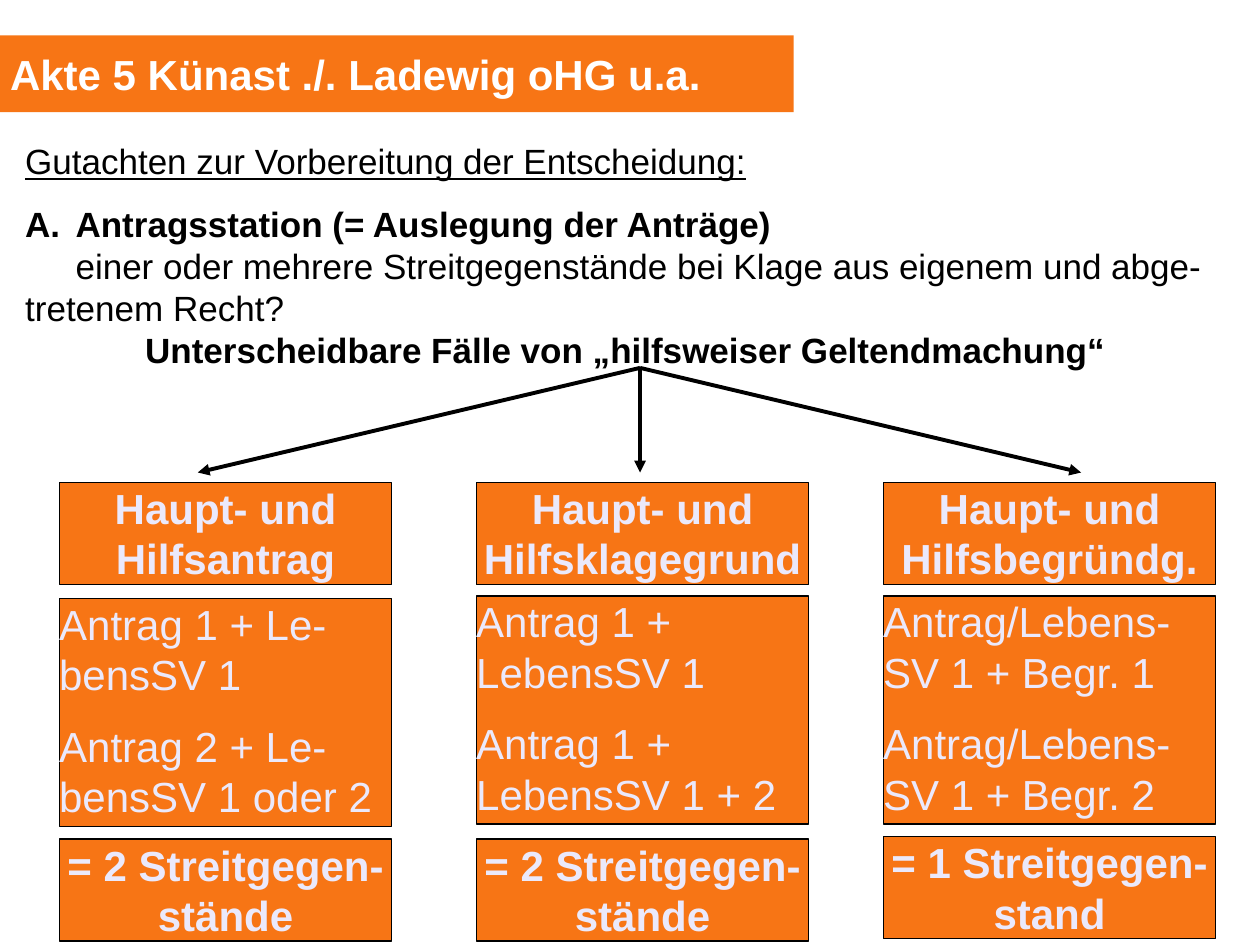
import pptx
import pptx.util
import pptx.dml.color
import pptx.enum.shapes
import pptx.enum.text
import pptx.oxml
import pptx.oxml.ns
from lxml import etree

Inches, Pt = pptx.util.Inches, pptx.util.Pt
RGBColor = pptx.dml.color.RGBColor
ALIGN = pptx.enum.text.PP_ALIGN
ANCHOR = pptx.enum.text.MSO_ANCHOR
qn = pptx.oxml.ns.qn

ORANGE = RGBColor(0xF7, 0x75, 0x15)
LAVENDER = RGBColor(0xEB, 0xE9, 0xFB)
BLACK = RGBColor(0, 0, 0)
WHITE = RGBColor(0xFF, 0xFF, 0xFF)

# Grid: three columns, three rows
COLS = (0.47, 3.78, 7.01)
COL_W = 2.64
HEAD_Y, BODY_Y, RESULT_Y = 3.83, 4.73, 6.66
HEAD_H, BODY_H = 0.81, 1.81
NUDGE = 0.02

# Heading, claims, result, and the offsets of the claims and result boxes
CASES = (
    ("Haupt- und Hilfsantrag",
     ("Antrag 1 + Le-bensSV 1", "Antrag 2 + Le-bensSV 1 oder 2"),
     "= 2 Streitgegen-stände", NUDGE, 0),
    ("Haupt- und Hilfsklagegrund",
     ("Antrag 1 + LebensSV 1", "Antrag 1 + LebensSV 1 + 2"),
     "= 2 Streitgegen-stände", 0, 0),
    ("Haupt- und Hilfsbegründg.",
     ("Antrag/Lebens-SV 1 + Begr. 1", "Antrag/Lebens-SV 1 + Begr. 2"),
     "= 1 Streitgegen-stand", 0, -NUDGE),
)


def set_frame(tf, anchor=ANCHOR.TOP, left=0):
    tf.word_wrap = True
    tf.vertical_anchor = anchor
    tf.margin_left = Inches(left)
    tf.margin_right = tf.margin_top = tf.margin_bottom = 0


def write(tf, texts, size, color, bold=False, align=ALIGN.LEFT, gap=0):
    for i, text in enumerate(texts):
        p = tf.paragraphs[0] if i == 0 else tf.add_paragraph()
        p.text = text
        p.alignment = align
        p.space_before = Pt(gap if i else 0)
        p.font.name = "Arial"
        p.font.size = Pt(size)
        p.font.bold = bold
        p.font.color.rgb = color


def add_box(s, x, y, w, h, outlined=True):
    sp = s.shapes.add_shape(pptx.enum.shapes.MSO_SHAPE.RECTANGLE,
                            Inches(x), Inches(y), Inches(w), Inches(h))
    sp.shadow.inherit = False
    sp.fill.solid()
    sp.fill.fore_color.rgb = ORANGE
    if outlined:
        sp.line.color.rgb = BLACK
        sp.line.width = Pt(0.75)
    else:
        sp.line.fill.background()
    return sp


def add_case_box(s, x, y, h, texts, heading):
    tf = add_box(s, x, y, COL_W, h).text_frame
    set_frame(tf)
    write(tf, texts, 24, LAVENDER, heading,
          ALIGN.CENTER if heading else ALIGN.LEFT, gap=12)


def add_arrow(s, x1, y1, x2, y2):
    c = s.shapes.add_connector(pptx.enum.shapes.MSO_CONNECTOR.STRAIGHT,
                               Inches(x1), Inches(y1), Inches(x2), Inches(y2))
    c.line.color.rgb = BLACK
    c.line.width = Pt(2.25)
    etree.SubElement(c.line._get_or_add_ln(), qn("a:tailEnd"), type="triangle")
    etree.SubElement(c._element.spPr, qn("a:effectLst"))


def add_tab_stop(p, x):
    # Tab stops must come before the default run properties
    tabs = etree.Element(qn("a:tabLst"))
    etree.SubElement(tabs, qn("a:tab"), pos=str(Inches(x)), algn="l")
    p._p.get_or_add_pPr().find(qn("a:defRPr")).addprevious(tabs)


def add_intro(s):
    tf = s.shapes.add_textbox(Inches(0.2), Inches(1.11),
                              Inches(9.53), Inches(1.85)).text_frame
    set_frame(tf)
    write(tf, (
        "Gutachten zur Vorbereitung der Entscheidung:",
        "A.\tAntragsstation (= Auslegung der Anträge)",
        "\teiner oder mehrere Streitgegenstände bei Klage aus eigenem und "
        "abge-\vtretenem Recht?",
        "Unterscheidbare Fälle von „hilfsweiser Geltendmachung“",
    ), 20, BLACK)
    title, station, question, cases = tf.paragraphs
    title.font.underline = True
    station.space_before = Pt(12)
    station.font.bold = cases.font.bold = True
    cases.alignment = ALIGN.CENTER
    for p in (station, question):
        add_tab_stop(p, 0.4)


def main():
    prs = pptx.Presentation()
    prs.slide_width, prs.slide_height = Inches(10), Inches(7.5)
    s = prs.slides.add_slide(prs.slide_layouts[6])

    # Title bar
    tf = add_box(s, 0, 0.28, 6.3, 0.61, outlined=False).text_frame
    set_frame(tf, ANCHOR.MIDDLE, left=0.08)
    write(tf, ["Akte 5 Künast ./. Ladewig oHG u.a."], 24, WHITE, bold=True)

    add_intro(s)

    # Three cases, one per column
    for x, (head, claims, result, body_dy, result_dy) in zip(COLS, CASES):
        add_case_box(s, x, HEAD_Y, HEAD_H, [head], True)
        add_case_box(s, x, BODY_Y + body_dy, BODY_H, claims, False)
        add_case_box(s, x, RESULT_Y + result_dy, HEAD_H, [result], True)

    # Arrows fanning out to the cases
    for x in (1.57, 5.08, 8.58):
        add_arrow(s, 5.08, 2.92, x, 3.75)

    prs.save("out.pptx")


if __name__ == "__main__":
    main()
